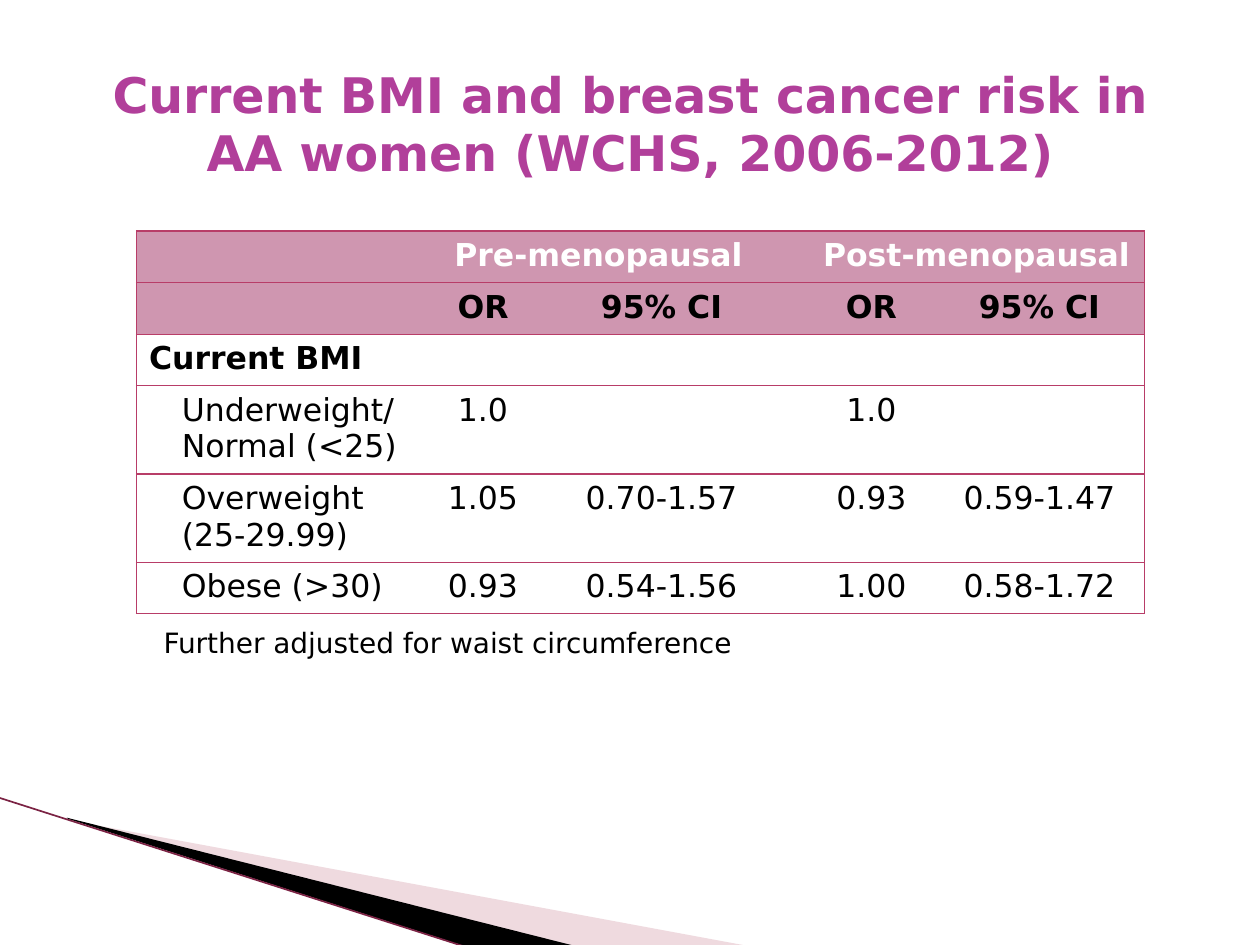
import pptx
import pptx.util
import pptx.dml.color
import pptx.enum.text
import pptx.oxml.ns
from lxml import etree

Pt = pptx.util.Pt
ALIGN = pptx.enum.text.PP_ALIGN
ANCHOR = pptx.enum.text.MSO_ANCHOR

HUES = {
    "title": "B13F9A",
    "head": "CF96B0",
    "rule": "B83D68",
    "edge": "7B2344",
    "wedge": "D8A3AF",
    "white": "FFFFFF",
    "black": "000000",
}

COLS = [162, 72, 132, 18, 72, 120]
ROW = 29.5
ROWS = [
    ["", "Pre-menopausal", "", "", "Post-menopausal", ""],
    ["", "OR", "95% CI", "", "OR", "95% CI"],
    ["Current BMI", "", "", "", "", ""],
    ["Underweight/Normal (<25)", "1.0", "", "", "1.0", ""],
    ["Overweight (25-29.99)", "1.05", "0.70-1.57", "", "0.93", "0.59-1.47"],
    ["Obese (>30)", "0.93", "0.54-1.56", "", "1.00", "0.58-1.72"],
]
WEDGES = [
    ("wedge", 40, [(39.6, 468.7), (428.4, 540.7), (328.3, 540.7), (39.6, 468)]),
    ("black", 100, [(38.2, 467.3), (329, 540.7), (267.8, 541.4), (38.9, 468)]),
]


def rgb(hue):
    return pptx.dml.color.RGBColor.from_string(HUES[hue])


def add(node, tag, **attrs):
    return etree.SubElement(node, pptx.oxml.ns.qn(tag), attrs)


def write(frame, text, size, hue, bold=False, align=ALIGN.LEFT):
    para = frame.paragraphs[0]
    para.alignment = align
    run = para.add_run()
    run.text = text
    look = {"name": "DejaVu Sans", "size": Pt(size), "bold": bold}
    for key, value in look.items():
        setattr(run.font, key, value)
    run.font.color.rgb = rgb(hue)
    return para


def add_text(slide, box, text, size, hue, frame, **look):
    shape = slide.shapes.add_textbox(*map(Pt, box))
    for key, value in frame.items():
        setattr(shape.text_frame, key, value)
    write(shape.text_frame, text, size, hue, **look)


def add_wedge(slide, hue, alpha, spots):
    first, *rest = [(Pt(x), Pt(y)) for x, y in spots]
    pen = slide.shapes.build_freeform(*first)
    pen.add_line_segments(rest, close=True)
    shape = pen.convert_to_shape()
    shape.shadow.inherit = False
    shape.line.fill.background()
    shape.fill.solid()
    shape.fill.fore_color.rgb = rgb(hue)
    if alpha < 100:
        tint = shape.fill._xPr.find(".//" + pptx.oxml.ns.qn("a:srgbClr"))
        add(tint, "a:alpha", val=str(alpha * 1000))


def add_line(slide, ends, hue, width):
    kind = pptx.enum.shapes.MSO_CONNECTOR.STRAIGHT
    line = slide.shapes.add_connector(kind, *map(Pt, ends))
    line.line.color.rgb = rgb(hue)
    line.line.width = Pt(width)
    add(line._element.spPr, "a:effectLst")


def add_rules(cell, sides):
    props = cell._tc.get_or_add_tcPr()
    for side, drawn in sides.items():
        line = add(props, "a:ln" + side, w=str(Pt(0.75)))
        if drawn:
            add(add(line, "a:solidFill"), "a:srgbClr", val=HUES["rule"])
        else:
            add(line, "a:noFill")


def fill_cell(cell, r, c, text):
    end = c + cell.span_width == len(COLS)
    add_rules(cell, {"L": c == 0, "R": end, "T": True, "B": True})
    if r < 2:
        cell.fill.solid()
        cell.fill.fore_color.rgb = rgb("head")
    else:
        cell.fill.background()
    if text:
        para = write(cell.text_frame, text, 18, "black" if r else "white",
                     bold=r < 3, align=ALIGN.CENTER if c else ALIGN.LEFT)
        if r > 2 and c == 0:
            para._p.get_or_add_pPr().set("marL", str(Pt(18.7)))


def add_grid(slide, left, top):
    size = (sum(COLS), ROW * len(ROWS))
    shape = slide.shapes.add_table(len(ROWS), len(COLS),
                                   *map(Pt, (left, top, *size)))
    table = shape.table
    for key in ("first_row", "horz_banding"):
        setattr(table, key, False)
    for col, width in zip(table.columns, COLS):
        col.width = Pt(width)
    for row in table.rows:
        row.height = Pt(ROW)
    for c in (1, 4):
        table.cell(0, c).merge(table.cell(0, c + 1))
    for r, texts in enumerate(ROWS):
        for c, text in enumerate(texts):
            fill_cell(table.cell(r, c), r, c, text)


def main():
    deck = pptx.Presentation()
    deck.slide_width, deck.slide_height = Pt(720), Pt(540)
    slide = deck.slides.add_slide(deck.slide_layouts[6])
    for wedge in WEDGES:
        add_wedge(slide, *wedge)
    add_line(slide, (-0.7, 455.8, 267.1, 541.4), "edge", 0.95)
    add_text(slide, (36, 18, 648, 104.4),
             "Current BMI and breast cancer risk in AA women (WCHS, 2006-2012)",
             28, "title",
             {"word_wrap": True, "vertical_anchor": ANCHOR.MIDDLE},
             bold=True, align=ALIGN.CENTER)
    add_grid(slide, 78, 132)
    add_text(slide, (86.4, 354.2, 345.6, 26.6),
             "Further adjusted for waist circumference", 16, "black",
             {"word_wrap": False,
              "auto_size": pptx.enum.text.MSO_AUTO_SIZE.SHAPE_TO_FIT_TEXT})
    deck.save("out.pptx")


if __name__ == "__main__":
    main()
